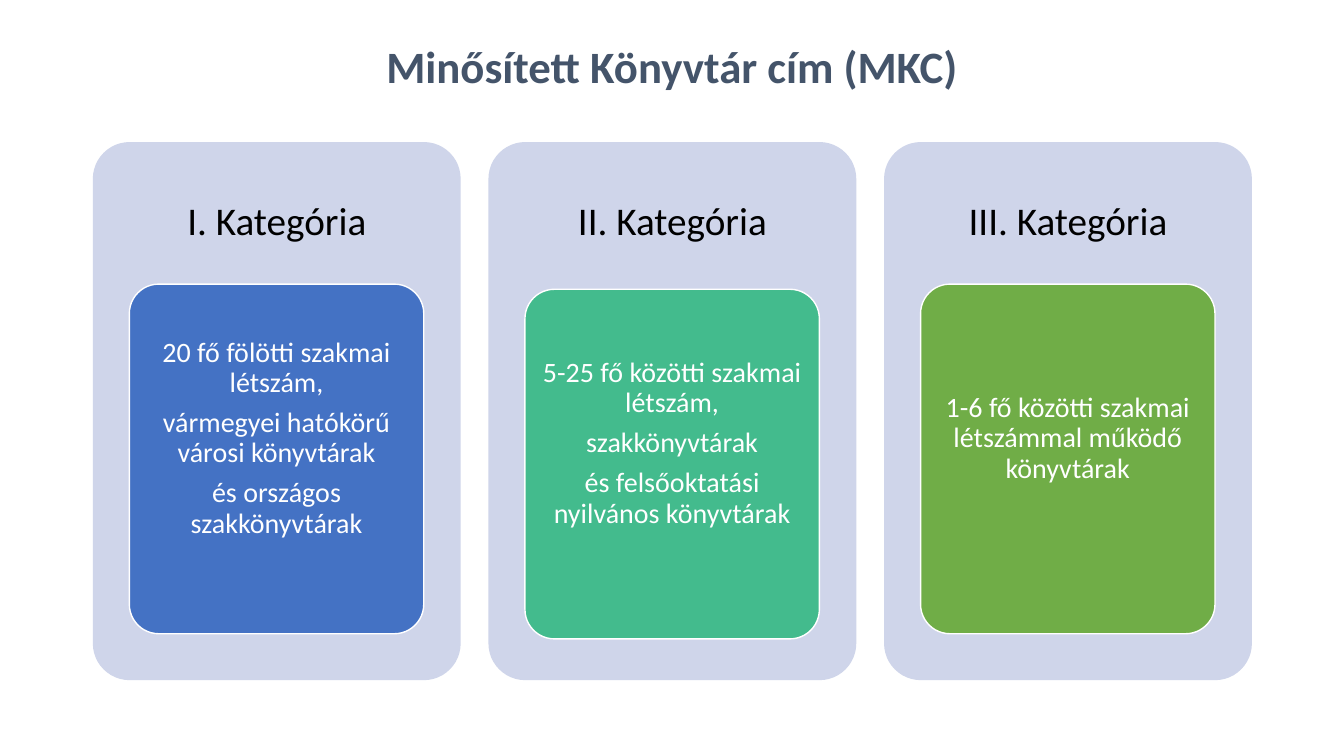
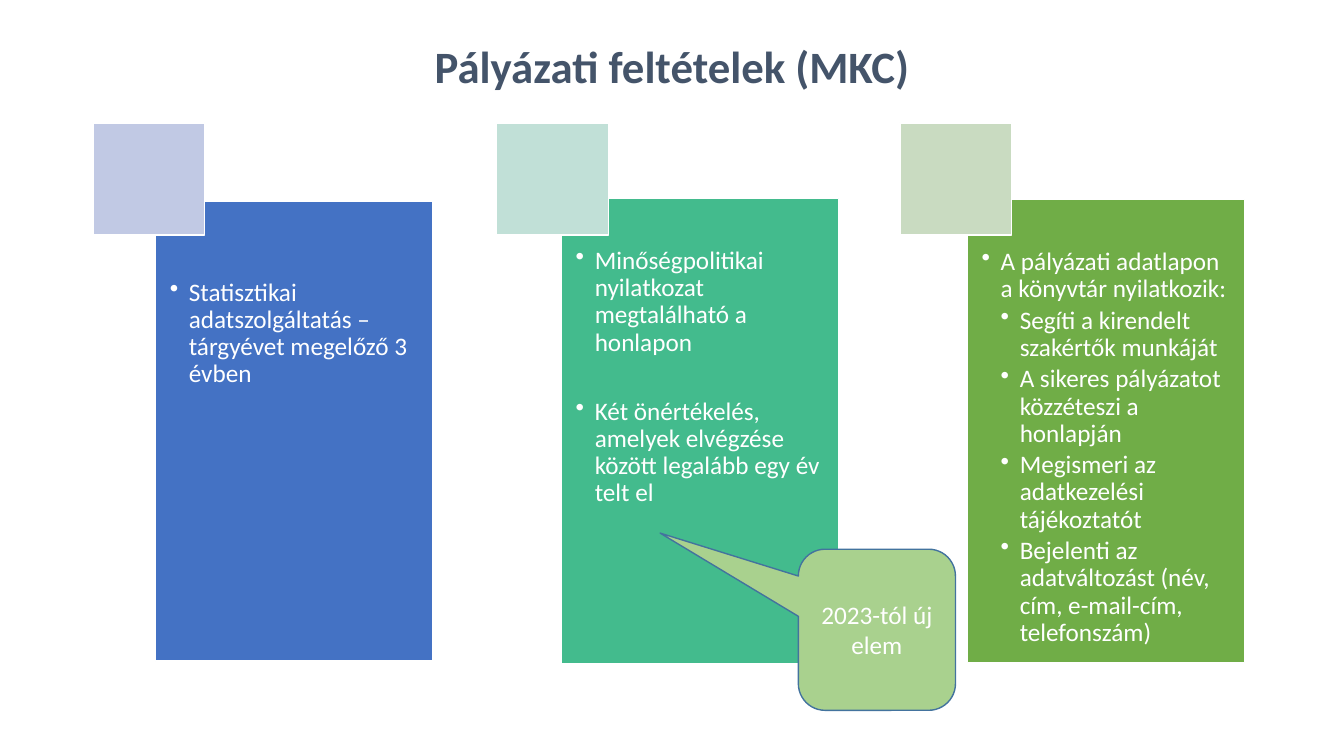
"""Build two slides on the qualified library title: categories and application terms."""
from lxml.etree import SubElement
from pptx import Presentation
from pptx.dml.color import RGBColor
from pptx.enum.shapes import MSO_SHAPE
from pptx.enum.text import MSO_ANCHOR, PP_ALIGN
from pptx.oxml.ns import qn
from pptx.util import Cm, Pt

FONT = "Calibri"
WHITE, BLACK, NAVY = "FFFFFF", "000000", "44546A"
BLUE, GREEN, OLIVE = "4472C4", "43BB8D", "70AD47"
PANEL, CALLOUT, CALLOUT_LINE = "CFD5EA", "A9D18E", "43739E"
LEFT = 2.34

CATEGORIES = [
    dict(head="I. Kategória", fill=BLUE, top=7.16, lines=[
        "20 fő fölötti szakmai létszám,",
        "vármegyei hatókörű városi könyvtárak",
        "és országos szakkönyvtárak"]),
    dict(head="II. Kategória", fill=GREEN, top=7.29, lines=[
        "5-25 fő közötti szakmai létszám,",
        "szakkönyvtárak",
        "és felsőoktatási nyilvános könyvtárak"]),
    dict(head="III. Kategória", fill=OLIVE, top=7.16, lines=[
        "1-6 fő közötti szakmai létszámmal működő könyvtárak"]),
]

CONDITIONS = [
    dict(fill=BLUE, tab="C1C9E4", top=5.08, height=11.58, inset=1.96, gap=3, items=[
        (0, "Statisztikai adatszolgáltatás – tárgyévet megelőző 3 évben")]),
    dict(fill=GREEN, tab="C1E0D7", top=5, height=11.73, inset=1.24, gap=30, items=[
        (0, "Minőségpolitikai nyilatkozat megtalálható a honlapon"),
        (0, "Két önértékelés, amelyek elvégzése között legalább egy év telt el")]),
    dict(fill=OLIVE, tab="C9DBC1", top=5.03, height=11.66, inset=1.24, gap=3, items=[
        (0, "A pályázati adatlapon a könyvtár nyilatkozik:"),
        (1, "Segíti a kirendelt szakértők munkáját"),
        (1, "A sikeres pályázatot közzéteszi a honlapján"),
        (1, "Megismeri az adatkezelési tájékoztatót"),
        (1, "Bejelenti az adatváltozást (név, cím, e-mail-cím, telefonszám)")]),
]


def rgb(color):
    return RGBColor.from_string(color)


def apply(obj, **values):
    for name, value in values.items():
        setattr(obj, name, value)


def add_box(s, kind, at, fill, line=None, adj=()):
    sp = s.shapes.add_shape(kind, *map(Cm, at))
    sp.shadow.inherit = False
    sp.fill.solid()
    sp.fill.fore_color.rgb = rgb(fill)
    if line:
        sp.line.color.rgb = rgb(line)
        sp.line.width = Pt(1)
    else:
        sp.line.fill.background()
    for i, value in enumerate(adj):
        sp.adjustments[i] = value
    return sp


def add_bullet(p, level):
    p.level = level
    pPr = p._p.get_or_add_pPr()
    pPr.set("marL", str(Cm(0.48 * (level + 1))))
    pPr.set("indent", str(Cm(-0.48)))
    SubElement(pPr, qn("a:buChar"), char="•")


def write(sp, items, size, color=WHITE, bold=False, bullets=False, gap=0,
          spacing=0.9, anchor=MSO_ANCHOR.MIDDLE, insets=(0.25, 0.13, 0.25, 0.13)):
    tf = sp.text_frame
    sides = ("margin_left", "margin_top", "margin_right", "margin_bottom")
    apply(tf, word_wrap=True, vertical_anchor=anchor, **dict(zip(sides, map(Cm, insets))))
    for i, (level, text) in enumerate(items):
        p = tf.add_paragraph() if i else tf.paragraphs[0]
        if bullets:
            add_bullet(p, level)
        apply(p, alignment=PP_ALIGN.LEFT if bullets else PP_ALIGN.CENTER, line_spacing=spacing)
        if i:
            p.space_before = Pt(gap)
        r = p.add_run()
        r.text = text
        apply(r.font, name=FONT, size=Pt(size), bold=bold)
        r.font.color.rgb = rgb(color)


def add_label(s, at, text, size, color, bold=False):
    write(s.shapes.add_textbox(*map(Cm, at)), [(0, text)], size, color, bold)


def add_slide(prs, title):
    s = prs.slides.add_slide(prs.slide_layouts[6])
    add_label(s, (LEFT, 0.58, 29.2, 2.34), title, 32, NAVY, True)
    return s


def build_categories(prs):
    s = add_slide(prs, "Minősített Könyvtár cím (MKC)")
    for i, c in enumerate(CATEGORIES):
        x = LEFT + 9.97 * i
        add_box(s, MSO_SHAPE.ROUNDED_RECTANGLE, (x, 3.58, 9.27, 13.56), PANEL, adj=[0.1])
        add_label(s, (x, 3.58, 9.27, 4.06), c["head"], 28, BLACK)
        card = add_box(s, MSO_SHAPE.ROUNDED_RECTANGLE, (x + 0.92, c["top"], 7.42, 8.81),
                       c["fill"], WHITE, [0.1])
        write(card, [(0, text) for text in c["lines"]], 20, gap=7,
              insets=(0.15, 0.1, 0.15, 1.12))


def build_conditions(prs):
    s = add_slide(prs, "Pályázati feltételek (MKC)")
    for i, c in enumerate(CONDITIONS):
        card = add_box(s, MSO_SHAPE.RECTANGLE, (3.92 + 10.23 * i, c["top"], 6.99, c["height"]),
                       c["fill"], WHITE)
        write(card, c["items"], 18, bullets=True, gap=c["gap"], anchor=MSO_ANCHOR.TOP,
              insets=(0.36, c["inset"], 0.36, 0.36))
        add_box(s, MSO_SHAPE.RECTANGLE, (LEFT + 10.17 * i, 3.1, 2.82, 2.82), c["tab"], WHITE)
    callout = add_box(s, MSO_SHAPE.ROUNDED_RECTANGULAR_CALLOUT, (20.12, 13.84, 3.96, 4.06),
                      CALLOUT, CALLOUT_LINE, [-1.38, -0.6, 0.17])
    write(callout, [(0, "2023-tól új elem")], 18, spacing=1.0)


def main():
    prs = Presentation()
    apply(prs, slide_width=Cm(33.87), slide_height=Cm(19.05))
    build_categories(prs)
    build_conditions(prs)
    prs.save("out.pptx")


if __name__ == "__main__":
    main()
